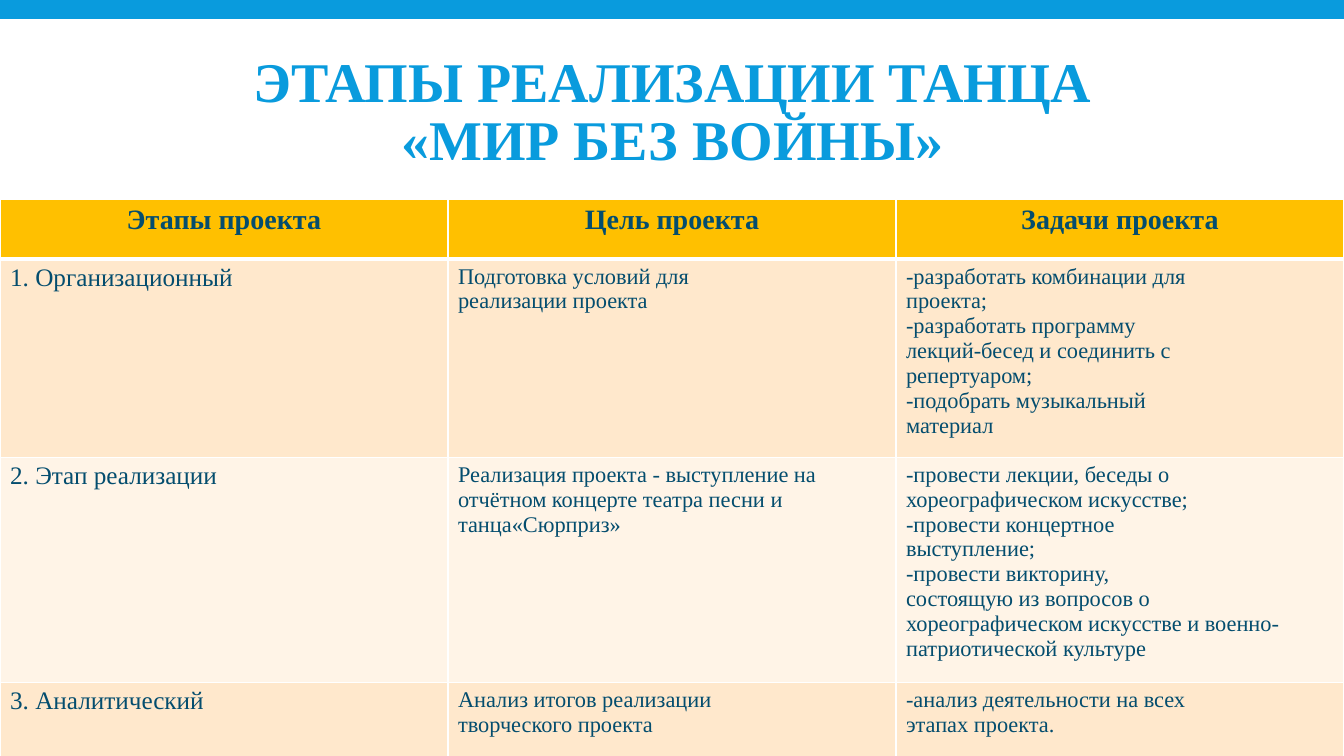
from lxml.etree import SubElement
from pptx import Presentation
from pptx.dml.color import RGBColor
from pptx.enum.shapes import MSO_SHAPE
from pptx.enum.text import MSO_ANCHOR, PP_ALIGN
from pptx.oxml.ns import qn
from pptx.util import Inches, Pt

COLORS = {
    "blue": "099BDD",
    "white": "FFFFFF",
    "text": "044D6E",
    "header": "FFC000",
    "odd_row": "FFE8CC",
    "even_row": "FFF4E7",
}
FONT = "Times New Roman"
SLIDE_WIDTH = 13.33
ROW_HEIGHTS = [0.59, 1.96, 2.23, 0.74]
STAGES = [
    ("Этапы проекта", "Цель проекта", "Задачи проекта"),
    (
        "1. Организационный",
        "Подготовка условий для\nреализации проекта",
        "-разработать комбинации для\nпроекта;\n-разработать программу\n"
        "лекций-бесед и соединить с\nрепертуаром;\n-подобрать музыкальный\nматериал",
    ),
    (
        "2. Этап реализации",
        "Реализация проекта - выступление на отчётном концерте театра песни и танца«Сюрприз»",
        "-провести лекции, беседы о хореографическом искусстве;\n"
        "-провести концертное\nвыступление;\n-провести викторину,\n"
        "состоящую из вопросов о\n"
        "хореографическом искусстве и военно-патриотической культуре",
    ),
    (
        "3. Аналитический",
        "Анализ итогов реализации\nтворческого проекта",
        "-анализ деятельности на всех\nэтапах проекта.",
    ),
]


def rgb(name):
    return RGBColor.from_string(COLORS[name])


def style_paragraph(paragraph, size, color, bold=False, align=PP_ALIGN.LEFT):
    paragraph.alignment = align
    font = paragraph.font
    font.name = FONT
    font.size = Pt(size)
    font.bold = bold
    font.color.rgb = rgb(color)


def add_title_band(slide):
    band = slide.shapes.add_shape(
        MSO_SHAPE.RECTANGLE, 0, Inches(0.19), Inches(SLIDE_WIDTH), Inches(1.8))
    band.shadow.inherit = False
    band.fill.solid()
    band.fill.fore_color.rgb = rgb("white")
    band.line.fill.background()


def add_title(slide, text):
    title = slide.shapes.add_textbox(
        Inches(1.32), Inches(0.31), Inches(10.7), Inches(1.65))
    frame = title.text_frame
    frame.word_wrap = True
    frame.vertical_anchor = MSO_ANCHOR.MIDDLE
    frame.text = text
    heading = frame.paragraphs[0]
    heading.line_spacing = 0.85
    style_paragraph(heading, 40, "blue", True, PP_ALIGN.CENTER)


def set_borders(cell, top, bottom):
    """Draw white cell borders; top and bottom widths are in points."""
    properties = cell._tc.get_or_add_tcPr()
    for side, width in (("L", 1), ("R", 1), ("T", top), ("B", bottom)):
        line = SubElement(properties, qn(f"a:ln{side}"), w=str(Pt(width)))
        fill = SubElement(line, qn("a:solidFill"))
        SubElement(fill, qn("a:srgbClr"), val=COLORS["white"])


def fill_cell(cell, text, row, column):
    is_header = row == 0
    set_borders(cell, top=3 if row == 1 else 1, bottom=3 if is_header else 1)
    cell.fill.solid()
    fill = "header" if is_header else "odd_row" if row % 2 else "even_row"
    cell.fill.fore_color.rgb = rgb(fill)
    cell.text_frame.text = text
    size = 20 if is_header else 18 if column == 0 else 16
    align = PP_ALIGN.CENTER if is_header else PP_ALIGN.LEFT
    for paragraph in cell.text_frame.paragraphs:
        style_paragraph(paragraph, size, "text", is_header, align)


def add_stage_table(slide):
    table = slide.shapes.add_table(
        len(STAGES), len(STAGES[0]), 0, Inches(1.98),
        Inches(SLIDE_WIDTH), Inches(sum(ROW_HEIGHTS))).table
    for row, (height, texts) in enumerate(zip(ROW_HEIGHTS, STAGES)):
        table.rows[row].height = Inches(height)
        for column, text in enumerate(texts):
            fill_cell(table.cell(row, column), text, row, column)


def main():
    presentation = Presentation()
    presentation.slide_width = Inches(SLIDE_WIDTH)
    presentation.slide_height = Inches(7.5)
    slide = presentation.slides.add_slide(presentation.slide_layouts[6])
    slide.background.fill.solid()
    slide.background.fill.fore_color.rgb = rgb("blue")
    add_title_band(slide)
    add_title(slide, "ЭТАПЫ РЕАЛИЗАЦИИ ТАНЦА\v«МИР БЕЗ ВОЙНЫ»")
    add_stage_table(slide)
    presentation.save("out.pptx")


if __name__ == "__main__":
    main()
